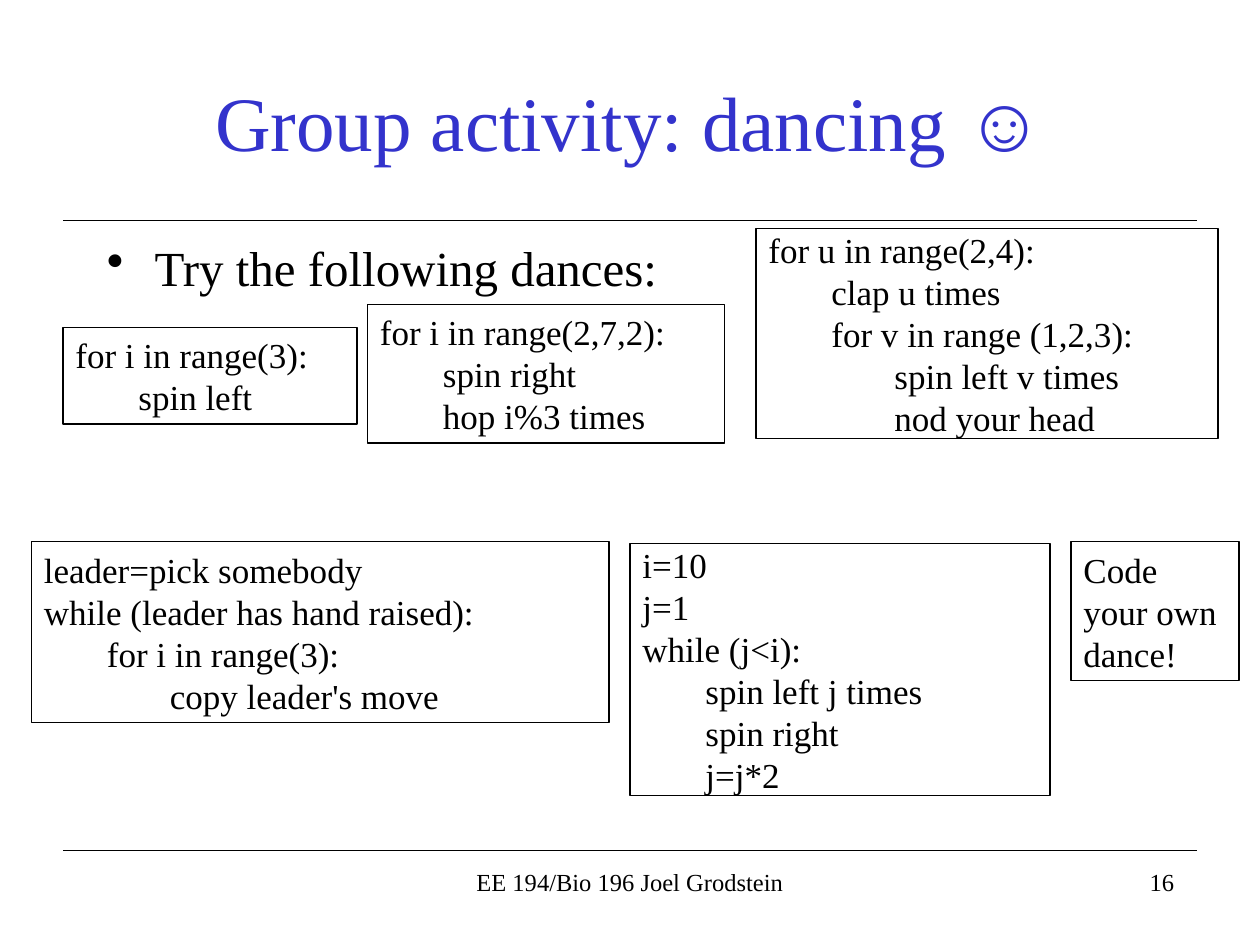
from lxml.etree import SubElement
from pptx import Presentation
from pptx.dml.color import RGBColor
from pptx.enum.shapes import MSO_CONNECTOR, MSO_SHAPE
from pptx.enum.text import MSO_ANCHOR, MSO_AUTO_SIZE, PP_ALIGN
from pptx.oxml.ns import qn
from pptx.util import Inches, Pt

COLORS = {"ink": "000000", "title": "3333CC"}
FONT = "Times New Roman"
GRID = 12
LINE_ROWS = 4
PADDING_ROWS = 0.6

DANCES = [
    {"at": (6, 31.2), "columns": 28, "code": [(0, "for i in range(3):"), (1, "spin left")]},
    {"at": (35, 29), "columns": 34, "code": [
        (0, "for i in range(2,7,2):"), (1, "spin right"), (1, "hop i%3 times")]},
    {"at": (72, 21.75), "columns": 44, "padding": 0, "code": [
        (0, "for u in range(2,4):"), (1, "clap u times"), (1, "for v in range (1,2,3):"),
        (2, "spin left v times"), (2, "nod your head")]},
    {"at": (3, 51.6), "columns": 55, "code": [
        (0, "leader=pick somebody"), (0, "while (leader has hand raised):"),
        (1, "for i in range(3):"), (2, "copy leader's move")]},
    {"at": (102, 51.6), "columns": 16, "lines": 3, "code": [(0, "Code your own dance!")]},
    {"at": (60, 51.75), "columns": 40, "padding": 0, "code": [
        (0, "i=10"), (0, "j=1"), (0, "while (j<i):"),
        (1, "spin left j times"), (1, "spin right"), (1, "j=j*2")]},
]


def cells(*counts):
    return [Inches(count / GRID) for count in counts]


def apply_format(target, values):
    for name, value in values.items():
        setattr(target, name, value)


def write(para, text, size, color="ink", align=PP_ALIGN.LEFT):
    para.alignment = align
    span = para.add_run()
    span.text = text
    apply_format(span.font, {"name": FONT, "size": Pt(size)})
    span.font.color.rgb = RGBColor.from_string(COLORS[color])


def add_rule(page, row):
    rule = page.shapes.add_connector(MSO_CONNECTOR.STRAIGHT, *cells(6, row, 114, row))
    rule.line.width = Pt(0.75)
    rule.line.color.rgb = RGBColor.from_string(COLORS["ink"])
    SubElement(rule.element.spPr, qn("a:effectLst"))


def add_title(page, box):
    title = page.shapes.title
    apply_format(title, dict(zip(("left", "top", "width", "height"), cells(*box))))
    apply_format(title.text_frame, {"vertical_anchor": MSO_ANCHOR.MIDDLE, "word_wrap": True})
    write(title.text_frame.paragraphs[0], "Group activity: dancing ☺", 44, "title", PP_ALIGN.CENTER)


def add_text(page, box, text, size, align=PP_ALIGN.LEFT):
    frame = page.shapes.add_textbox(*cells(*box)).text_frame
    frame.word_wrap = True
    para = frame.paragraphs[0]
    write(para, text, size, align=align)
    return para


def add_bullet(page, box):
    para = add_text(page, box, "Try the following dances:", 28)
    para.space_before = Pt(5.6)
    properties = para._p.get_or_add_pPr()
    properties.set("marL", str(Inches(0.38)))
    properties.set("indent", str(Inches(-0.38)))
    SubElement(properties, qn("a:buChar"), char="•")


def add_dance(page, at, columns, code, padding=PADDING_ROWS, lines=None):
    rows = LINE_ROWS * (lines or len(code)) + 2 * padding
    box = page.shapes.add_shape(MSO_SHAPE.RECTANGLE, *cells(*at, columns, rows))
    box.shadow.inherit = False
    box.fill.background()
    box.line.width = Pt(0.75)
    box.line.color.rgb = RGBColor.from_string(COLORS["ink"])
    frame = box.text_frame
    margin = Inches(padding / GRID)
    apply_format(frame, {
        "word_wrap": True, "auto_size": MSO_AUTO_SIZE.SHAPE_TO_FIT_TEXT,
        "vertical_anchor": MSO_ANCHOR.TOP, "margin_top": margin, "margin_bottom": margin,
        "margin_right": Inches(0.1) if padding else 0})
    for index, (level, text) in enumerate(code):
        para = frame.add_paragraph() if index else frame.paragraphs[0]
        para.level = level
        para._p.get_or_add_pPr().set("marL", str(Inches(level / 2)))
        write(para, text, 20)


def add_footer(page, top, height):
    add_text(page, (75, top, 38, height), "16", 14, PP_ALIGN.RIGHT)
    add_text(page, (41, top, 38, height), "EE 194/Bio 196 Joel Grodstein", 14, PP_ALIGN.CENTER)


def main():
    deck = Presentation()
    apply_format(deck, {"slide_width": Inches(10), "slide_height": Inches(7.5)})
    page = deck.slides.add_slide(deck.slide_layouts[5])
    for row in (81, 21):
        add_rule(page, row)
    add_title(page, (9, 4, 102, 15))
    add_bullet(page, (9, 22, 102, 12))
    add_footer(page, 82, 6)
    for dance in DANCES:
        add_dance(page, **dance)
    deck.save("out.pptx")


if __name__ == "__main__":
    main()
